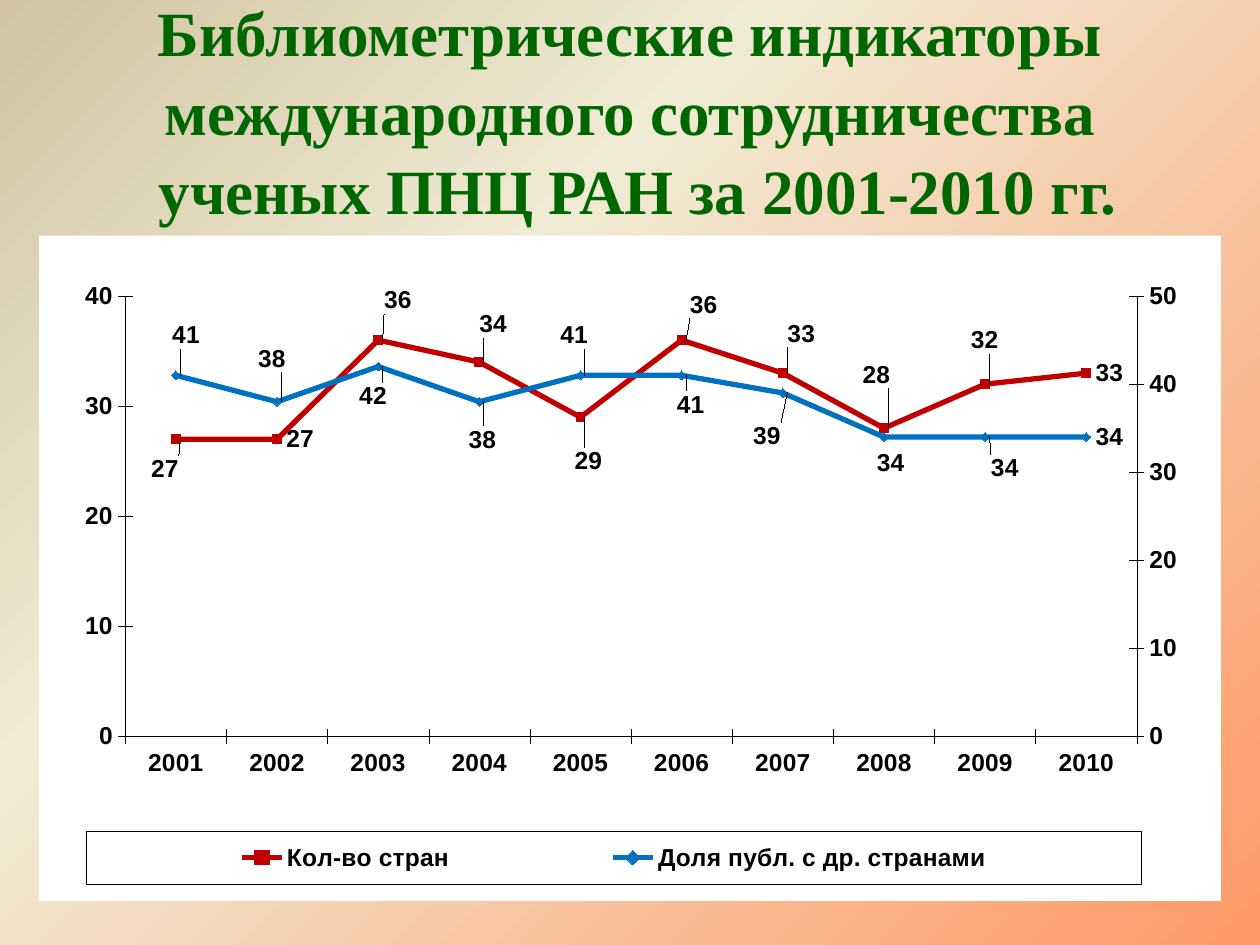
from copy import deepcopy

from pptx import Presentation
from pptx.chart.data import CategoryChartData
from pptx.dml.color import RGBColor
from pptx.enum.chart import (XL_CHART_TYPE, XL_LABEL_POSITION,
                             XL_LEGEND_POSITION, XL_MARKER_STYLE, XL_TICK_MARK)
from pptx.enum.text import MSO_ANCHOR, MSO_AUTO_SIZE, PP_ALIGN
from pptx.oxml import parse_xml
from pptx.oxml.ns import nsdecls, qn
from pptx.util import Inches, Pt

BLACK = RGBColor(0, 0, 0)
GREEN = RGBColor(0x00, 0x66, 0x00)
RED = RGBColor(0xC0, 0x00, 0x00)
BLUE = RGBColor(0x00, 0x70, 0xC0)
STOPS = [(0, RGBColor(0xFF, 0x99, 0x66)),
         (0.65, RGBColor(0xF0, 0xEB, 0xD5)),
         (1, RGBColor(0xD1, 0xC3, 0x9F))]

TITLE = ("Библиометрические индикаторы международного сотрудничества\v"
         " ученых ПНЦ РАН за 2001-2010 гг.")
YEARS = [str(year) for year in range(2001, 2011)]

# Label shifts: point index -> (right, down), in percent of the chart size
LINES = [
    ("Кол-во стран", [27, 27, 36, 34, 29, 36, 33, 28, 32, 33],
     RED, XL_MARKER_STYLE.SQUARE,
     {0: (-2.9, 4.5), 2: (-0.3, -6), 3: (-0.8, -5.7), 4: (-1.3, 6.6),
      5: (-0.1, -5.3), 6: (-0.4, -5.9), 7: (-2.6, -8), 8: (-2, -6.6)}),
    ("Доля публ. с др. странами", [41, 38, 42, 38, 41, 41, 39, 34, 34, 34],
     BLUE, XL_MARKER_STYLE.DIAMOND,
     {0: (-1.1, -6), 1: (-2.4, -6.5), 2: (-2.4, 4.4), 3: (-1.7, 5.7),
      4: (-2.5, -6), 5: (-1.2, 4.4), 6: (-3.3, 6.5), 7: (-1.4, 3.9),
      8: (-0.3, 4.7)}),
]


def style(font, size=14, bold=True, color=BLACK, name="Arial"):
    font.size, font.bold, font.name = Pt(size), bold, name
    font.color.rgb = color


def write(frame, text, align=PP_ALIGN.CENTER, space=1.0, **look):
    para = frame.paragraphs[0]
    para.text = text
    para.alignment, para.line_spacing = align, space
    for run in para.runs:
        style(run.font, **look)


def shade(slide):
    """Three-colour diagonal gradient behind the slide."""
    fill = slide.background.fill
    fill.gradient()
    fill.gradient_angle = 135
    stops = slide._element.xpath(".//a:gsLst")[0]
    stops.append(deepcopy(stops[0]))
    for stop, (place, color) in zip(fill.gradient_stops, STOPS):
        stop.position = place
        stop.color.rgb = color


def layout(parent, index, **parts):
    """Manual layout; a full frame counts from the chart's edge."""
    for old in parent.findall(qn("c:layout")):
        parent.remove(old)
    modes = {"xMode": "edge", "yMode": "edge"} if "w" in parts else {}
    if parent.tag == qn("c:plotArea"):
        modes = {"layoutTarget": "inner", **modes}
    items = "".join(f'<c:{tag} val="{val}"/>'
                    for tag, val in {**modes, **parts}.items())
    parent.insert(index, parse_xml(
        f'<c:layout {nsdecls("c")}><c:manualLayout>{items}'
        '</c:manualLayout></c:layout>'))


def box(parent, line):
    """White fill and an outline, put before the text properties."""
    parent.find(qn("c:txPr")).addprevious(parse_xml(
        f'<c:spPr {nsdecls("c", "a")}><a:solidFill><a:srgbClr val="FFFFFF"/>'
        f'</a:solidFill><a:ln w="3175">{line}</a:ln></c:spPr>'))


def format_axis(axis):
    axis.major_tick_mark = XL_TICK_MARK.CROSS
    axis.minor_tick_mark = XL_TICK_MARK.NONE
    axis.has_major_gridlines = False
    axis.format.line.color.rgb = BLACK
    axis.format.line.width = Pt(0.25)
    style(axis.tick_labels.font)


def format_line(series, color, mark, shifts):
    series.smooth = False
    series.format.line.color.rgb = color
    series.format.line.width = Pt(3)
    series.marker.style, series.marker.size = mark, 5
    for part in (series.marker.format.fill, series.marker.format.line.fill):
        part.solid()
        part.fore_color.rgb = color
    labels = series.data_labels
    labels.show_value = True
    labels.position = XL_LABEL_POSITION.RIGHT
    style(labels.font)
    for index in shifts:
        label = series.points[index].data_label
        style(label.font)
        label.position = XL_LABEL_POSITION.RIGHT
    for item, (right, down) in zip(series._element.xpath(".//c:dLbl"),
                                   shifts.values()):
        layout(item, 1, x=right / 100, y=down / 100)


def split_axes(chart, top):
    """Move the second line to its own axis on the right."""
    plot = chart._chartSpace.xpath(".//c:lineChart")[0]
    twin = deepcopy(plot)
    plot.remove(plot.findall(qn("c:ser"))[1])
    twin.remove(twin.findall(qn("c:ser"))[0])
    plot.addnext(twin)
    cat, val = chart.category_axis._element, chart.value_axis._element
    cat2, val2 = deepcopy(cat), deepcopy(val)
    val.addnext(val2)
    val2.addnext(cat2)
    names = {cat.find(qn("c:axId")).get("val"): "5001",
             val.find(qn("c:axId")).get("val"): "5002"}
    for part in (twin, cat2, val2):
        for ref in part.xpath("./c:axId | ./c:crossAx"):
            ref.set("val", names[ref.get("val")])
    cat2.find(qn("c:delete")).set("val", "1")
    val2.find(qn("c:axPos")).set("val", "r")
    val2.find(qn("c:crosses")).set("val", "max")
    val2.xpath("./c:scaling/c:max")[0].set("val", str(top))


def add_lines(slide):
    data = CategoryChartData()
    data.categories = YEARS
    for name, values, *_ in LINES:
        data.add_series(name, values)
    chart = slide.shapes.add_chart(
        XL_CHART_TYPE.LINE_MARKERS, Inches(0.31), Inches(1.87),
        Inches(9.38), Inches(5.28), data).chart
    chart.has_title = False
    style(chart.font, size=10, bold=False)
    box(chart._chartSpace, "<a:noFill/>")

    # Axes and lines
    axis = chart.value_axis
    axis.minimum_scale, axis.maximum_scale, axis.major_unit = 0, 40, 10
    format_axis(axis)
    format_axis(chart.category_axis)
    for series, (_, _, color, mark, shifts) in zip(chart.plots[0].series, LINES):
        format_line(series, color, mark, shifts)
    split_axes(chart, 50)
    layout(chart._chartSpace.xpath(".//c:plotArea")[0], 0,
           x=0.073, y=0.091, w=0.856, h=0.662)

    # Legend
    chart.has_legend = True
    legend = chart.legend
    legend.position = XL_LEGEND_POSITION.BOTTOM
    legend.include_in_layout = False
    style(legend.font)
    layout(legend._element, 1, x=0.04, y=0.895, w=0.893, h=0.08)
    box(legend._element, '<a:solidFill><a:srgbClr val="000000"/></a:solidFill>')


def add_title(slide):
    title = slide.shapes.title
    title.left, title.top = 0, 0
    title.width, title.height = Inches(10), Inches(1.72)
    frame = title.text_frame
    frame.auto_size = MSO_AUTO_SIZE.NONE
    frame.vertical_anchor = MSO_ANCHOR.MIDDLE
    write(frame, TITLE, space=1.05, size=36, color=GREEN,
          name="Times New Roman")


def main():
    deck = Presentation()
    deck.slide_width, deck.slide_height = Inches(10), Inches(7.5)
    slide = deck.slides.add_slide(deck.slide_layouts[5])
    shade(slide)
    add_title(slide)
    add_lines(slide)
    deck.save("out.pptx")


if __name__ == "__main__":
    main()
